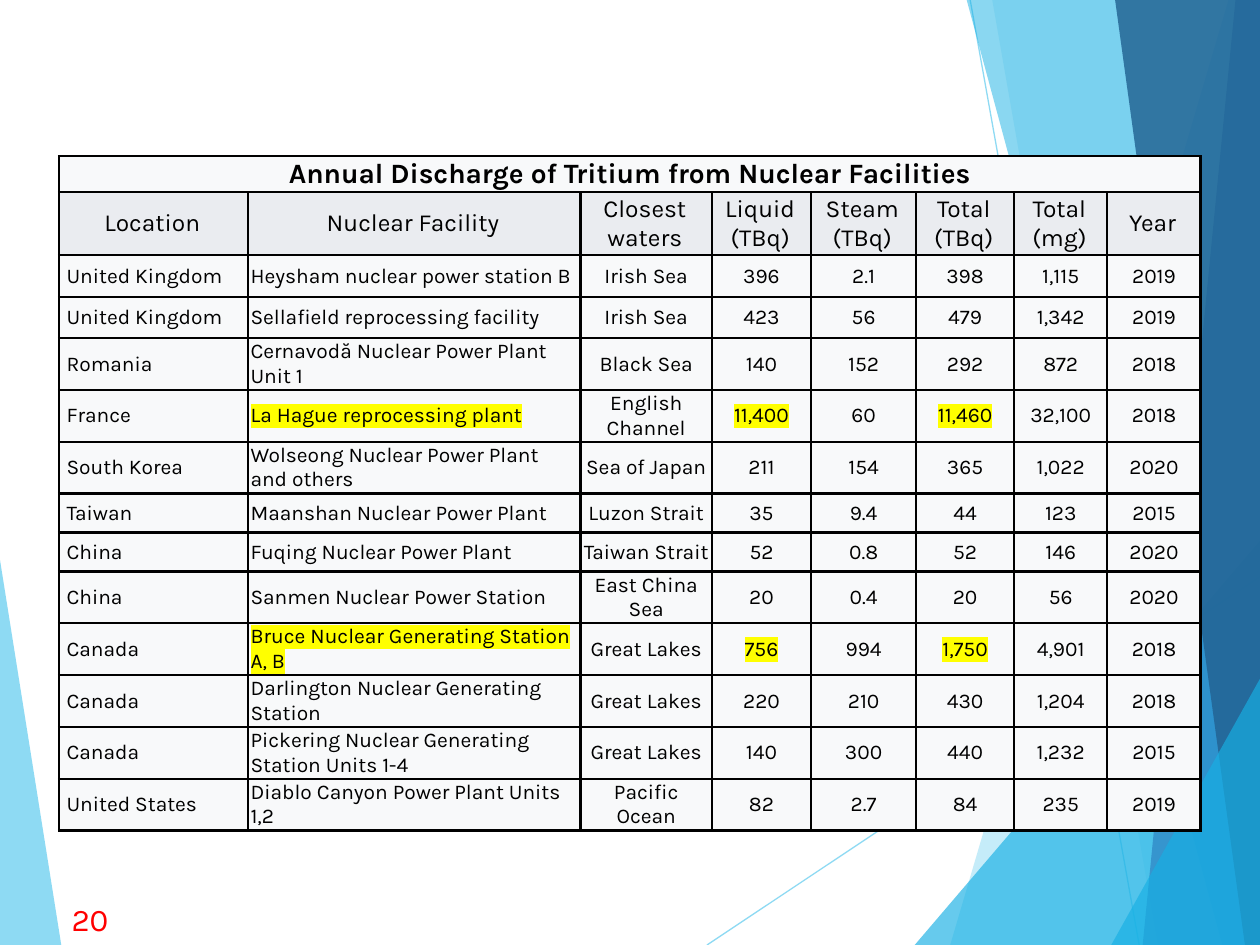
import lxml.etree
import pptx
import pptx.dml.color
import pptx.enum.text
import pptx.oxml.ns
import pptx.util

Pt = pptx.util.Pt
qn = pptx.oxml.ns.qn

THEME = {
    "font": "Karla",
    "text": "000000", "number": "FF0000", "border": "000000", "highlight": "FFFF00",
    "head_fill": "EAECF0", "body_fill": "F8F9FA",
    "sky": "5FCBEF", "cyan": "17B0E4", "blue": "2E83C3", "navy": "226292",
    "title_size": 16, "head_size": 14, "body_size": 12, "number_size": 18,
    "border_width": 1.5, "line_width": 0.75,
}
WIDTH, HEIGHT = 720, 540

TITLE = "Annual Discharge of Tritium from Nuclear Facilities"
HEADINGS = ["Location", "Nuclear Facility", "Closest\nwaters", "Liquid\n(TBq)",
            "Steam\n(TBq)", "Total\n(TBq)", "Total\n(mg)", "Year"]
FACILITIES = [
    (" United Kingdom", "Heysham nuclear power station B", "Irish Sea", "396", "2.1", "398", "1,115", "2019"),
    (" United Kingdom", "Sellafield reprocessing facility", "Irish Sea", "423", "56", "479", "1,342", "2019"),
    (" Romania", "Cernavodă Nuclear Power Plant Unit 1", "Black Sea", "140", "152", "292", "872", "2018"),
    (" France", "La Hague reprocessing plant", "English Channel", "11,400", "60", "11,460", "32,100", "2018"),
    (" South Korea", "Wolseong Nuclear Power Plant and others", "Sea of Japan", "211", "154", "365", "1,022", "2020"),
    (" Taiwan", "Maanshan Nuclear Power Plant", "Luzon Strait", "35", "9.4", "44", "123", "2015"),
    (" China", "Fuqing Nuclear Power Plant", "Taiwan Strait", "52", "0.8", "52", "146", "2020"),
    (" China", "Sanmen Nuclear Power Station", "East China Sea", "20", "0.4", "20", "56", "2020"),
    (" Canada", "Bruce Nuclear Generating Station A, B", "Great Lakes", "756", "994", "1,750", "4,901", "2018"),
    (" Canada", "Darlington Nuclear Generating Station", "Great Lakes", "220", "210", "430", "1,204", "2018"),
    (" Canada", "Pickering Nuclear Generating Station Units 1-4", "Great Lakes", "140", "300", "440", "1,232", "2015"),
    (" United States", "Diablo Canyon Power Plant Units 1,2", "Pacific Ocean", "82", "2.7", "84", "235", "2019"),
]
HIGHLIGHTED_FACILITIES = {3, 8}
HIGHLIGHTED_COLUMNS = {1, 3, 5}
PAGE_NUMBER = "20"

TABLE_LEFT, TABLE_TOP = 33.8, 89.3
COLUMN_WIDTHS = [108, 190, 75, 56.8, 60, 56, 53.3, 53.3]
ROW_HEIGHTS = [20.6, 36] + [23.7] * 2 + [29.6] * 3 + [22.3] * 2 + [29.6] * 5

LEFT_WEDGE = [(0, 320), (35, HEIGHT), (0, HEIGHT)]
RAYS = [((404, HEIGHT), (WIDTH, 329.5)), ((554.4, 0), (651, HEIGHT))]


def panel(top_x, bottom_x):
    return [(top_x, 0), (bottom_x, HEIGHT), (WIDTH, HEIGHT), (WIDTH, 0)]


def corner(bottom_x, right_y):
    return [(bottom_x, HEIGHT), (WIDTH, right_y), (WIDTH, HEIGHT)]


FACETS = [
    (panel(702, 543), "sky", 36),
    (panel(567, 661.7), "sky", 20),
    (corner(522.7, 309), "cyan", 66),
    (panel(552.4, 698.4), "cyan", 50),
    (panel(706, 653), "blue", 70),
    (panel(637.2, 711.4), "navy", 82),
    (corner(635, 387.8), "cyan", 66),
]


def color(name):
    return pptx.dml.color.RGBColor.from_string(THEME[name])


def set_opacity(part, percent):
    for srgb in part._element.spPr.iter(qn("a:srgbClr")):
        lxml.etree.SubElement(srgb, qn("a:alpha"), val=str(percent * 1000))


def add_facet(slide, corners, fill, opacity):
    points = [(Pt(x), Pt(y)) for x, y in corners]
    builder = slide.shapes.build_freeform(*points[0], scale=1.0)
    builder.add_line_segments(points[1:], close=True)
    facet = builder.convert_to_shape()
    facet.shadow.inherit = False
    facet.fill.solid()
    facet.fill.fore_color.rgb = color(fill)
    facet.line.fill.background()
    set_opacity(facet, opacity)


def add_ray(slide, start, end):
    ray = slide.shapes.add_connector(1, *map(Pt, start + end))
    ray.line.color.rgb = color("sky")
    ray.line.width = Pt(THEME["line_width"])
    set_opacity(ray, 70)
    lxml.etree.SubElement(ray._element.spPr, qn("a:effectLst"))


def format_text(paragraph, size, ink="text", bold=False, highlighted=False):
    for run in paragraph.runs:
        run.font.name = THEME["font"]
        run.font.size = Pt(size)
        run.font.bold = bold
        run.font.color.rgb = color(ink)
        if highlighted:
            mark = lxml.etree.Element(qn("a:highlight"))
            lxml.etree.SubElement(mark, qn("a:srgbClr"), val=THEME["highlight"])
            run._r.rPr.find(qn("a:latin")).addprevious(mark)
    for line_break in paragraph._p.findall(qn("a:br")):
        lxml.etree.SubElement(line_break, qn("a:rPr"), sz=str(size * 100))


def style_cell(cell, fill, right_margin=1.4):
    cell.vertical_anchor = pptx.enum.text.MSO_ANCHOR.MIDDLE
    cell.margin_left, cell.margin_right = Pt(1.4), Pt(right_margin)
    cell.margin_top = cell.margin_bottom = Pt(0.7)
    properties = cell._tc.get_or_add_tcPr()
    for side in ("lnL", "lnR", "lnT", "lnB"):
        border = lxml.etree.SubElement(properties, qn("a:" + side), w=str(Pt(THEME["border_width"])))
        paint = lxml.etree.SubElement(border, qn("a:solidFill"))
        lxml.etree.SubElement(paint, qn("a:srgbClr"), val=THEME["border"])
    cell.fill.solid()
    cell.fill.fore_color.rgb = color(fill)


def fill_cell(cell, text, size, centered=True, **text_format):
    paragraph = cell.text_frame.paragraphs[0]
    paragraph.text = text
    if centered:
        paragraph.alignment = pptx.enum.text.PP_ALIGN.CENTER
    format_text(paragraph, size, **text_format)


def add_discharge_table(slide):
    frame = slide.shapes.add_table(
        len(ROW_HEIGHTS), len(COLUMN_WIDTHS), Pt(TABLE_LEFT), Pt(TABLE_TOP),
        Pt(sum(COLUMN_WIDTHS)), Pt(sum(ROW_HEIGHTS)))
    table = frame.table
    table.horz_banding = False
    table.first_row = False
    for column, width in zip(table.columns, COLUMN_WIDTHS):
        column.width = Pt(width)
    for row, height in zip(table.rows, ROW_HEIGHTS):
        row.height = Pt(height)

    for cell in table.rows[0].cells:
        style_cell(cell, "body_fill")
    table.cell(0, 0).merge(table.cell(0, len(COLUMN_WIDTHS) - 1))
    fill_cell(table.cell(0, 0), TITLE, THEME["title_size"], bold=True)

    for cell, heading in zip(table.rows[1].cells, HEADINGS):
        style_cell(cell, "head_fill", right_margin=2.9)
        fill_cell(cell, heading, THEME["head_size"])

    for index, facility in enumerate(FACILITIES):
        for column, value in enumerate(facility):
            cell = table.cell(index + 2, column)
            style_cell(cell, "body_fill")
            fill_cell(cell, value, THEME["body_size"], centered=column > 1,
                      highlighted=index in HIGHLIGHTED_FACILITIES and column in HIGHLIGHTED_COLUMNS)


def add_page_number(slide):
    number = slide.shapes.add_textbox(Pt(33.8), Pt(511), Pt(35.3), Pt(29))
    number.text_frame.word_wrap = True
    number.text_frame.text = PAGE_NUMBER
    format_text(number.text_frame.paragraphs[0], THEME["number_size"], ink="number")


def main():
    deck = pptx.Presentation()
    deck.slide_width, deck.slide_height = Pt(WIDTH), Pt(HEIGHT)
    slide = deck.slides.add_slide(deck.slide_layouts[6])
    add_facet(slide, LEFT_WEDGE, "sky", 70)
    for start, end in RAYS:
        add_ray(slide, start, end)
    for corners, fill, opacity in FACETS:
        add_facet(slide, corners, fill, opacity)
    add_discharge_table(slide)
    add_page_number(slide)
    deck.save("out.pptx")


if __name__ == "__main__":
    main()
